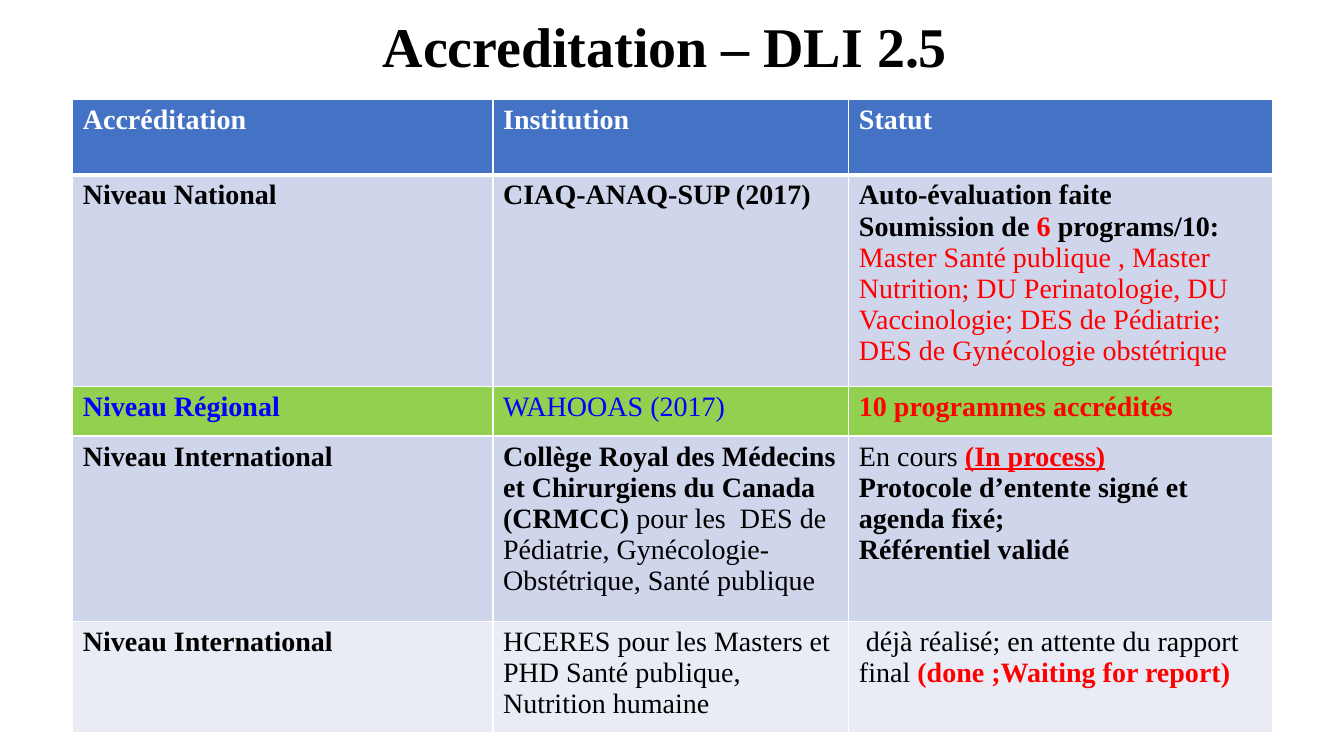
import dataclasses

import pptx
import pptx.dml.color
import pptx.enum.text
import pptx.oxml.ns
import pptx.util
from lxml import etree

FONT = "Times New Roman"
WHITE, BLACK, RED, BLUE = "FFFFFF", "000000", "FF0000", "0000FF"
HEADER_FILL, BAND_FILL, PLAIN_FILL, GREEN_FILL = "4472C4", "CFD5EA", "E9EBF5", "92D050"
COLUMN_WIDTHS = [300.2, 254.2, 302.4]


@dataclasses.dataclass(frozen=True)
class Span:
    text: str
    color: str = BLACK
    bold: bool = True
    underline: bool = False


Paragraphs = list[list[Span]]


@dataclasses.dataclass(frozen=True)
class Level:
    height: float
    fill: str
    cells: list[Paragraphs]
    bottom_border: float = 1


LEVELS = [
    Level(54, HEADER_FILL, [
        [[Span(heading, WHITE)]] for heading in ("Accréditation", "Institution", "Statut")
    ], bottom_border=3),
    Level(140.4, BAND_FILL, [
        [[Span("Niveau National")]],
        [[Span("CIAQ-ANAQ-SUP (2017)")]],
        [
            [Span("Auto-évaluation faite")],
            [
                Span("Soumission de "),
                Span("6 ", RED),
                Span("programs/10: "),
                Span("Master Santé publique , Master Nutrition; DU Perinatologie, "
                     "DU Vaccinologie; DES de Pédiatrie; DES de Gynécologie obstétrique",
                     RED, bold=False),
            ],
        ],
    ]),
    Level(35.3, GREEN_FILL, [
        [[Span("Niveau Régional", BLUE)]],
        [[Span("WAHOOAS (2017)", BLUE, bold=False)]],
        [[Span("10 programmes accrédités", RED)]],
    ]),
    Level(132.5, BAND_FILL, [
        [[Span("Niveau International")]],
        [[
            Span("Collège Royal des Médecins et Chirurgiens du Canada (CRMCC) "),
            Span("pour les  DES de Pédiatrie, Gynécologie-Obstétrique, Santé publique", bold=False),
        ]],
        [
            [Span("En cours ", bold=False), Span("(In process)", RED, underline=True)],
            [Span("Protocole d’entente signé et agenda fixé;")],
            [Span("Référentiel validé")],
        ],
    ]),
    Level(77.8, PLAIN_FILL, [
        [[Span("Niveau International")]],
        [[Span("HCERES pour les Masters et PHD Santé publique, Nutrition humaine", bold=False)]],
        [[
            Span(" déjà réalisé; en attente du rapport final ", bold=False),
            Span("(done ;Waiting for report)", RED),
        ]],
    ]),
]


def rgb(value: str) -> pptx.dml.color.RGBColor:
    return pptx.dml.color.RGBColor.from_string(value)


def write_paragraphs(frame, paragraphs: Paragraphs, size: float) -> None:
    frame.text = "\n".join("" for _ in paragraphs)
    for paragraph, spans in zip(frame.paragraphs, paragraphs):
        for span in spans:
            run = paragraph.add_run()
            run.text = span.text
            run.font.name = FONT
            run.font.size = pptx.util.Pt(size)
            run.font.bold = span.bold
            run.font.underline = span.underline
            run.font.color.rgb = rgb(span.color)


def add_borders(cell, top: float, bottom: float) -> None:
    properties = cell._tc.get_or_add_tcPr()
    qn = pptx.oxml.ns.qn
    for side, width in (("L", 1), ("R", 1), ("T", top), ("B", bottom)):
        line = etree.SubElement(properties, qn(f"a:ln{side}"), w=str(pptx.util.Pt(width)))
        solid = etree.SubElement(line, qn("a:solidFill"))
        etree.SubElement(solid, qn("a:srgbClr"), val=WHITE)


def add_title(slide) -> None:
    title = slide.shapes.add_textbox(
        pptx.util.Pt(156), pptx.util.Pt(0), pptx.util.Pt(648), pptx.util.Pt(70.5))
    frame = title.text_frame
    frame.word_wrap = True
    frame.vertical_anchor = pptx.enum.text.MSO_ANCHOR.MIDDLE
    write_paragraphs(frame, [[Span("Accreditation – DLI 2.5 ")]], 40)
    frame.paragraphs[0].alignment = pptx.enum.text.PP_ALIGN.CENTER
    frame.paragraphs[0].line_spacing = 0.9


def add_accreditation_table(slide) -> None:
    table = slide.shapes.add_table(
        len(LEVELS), len(COLUMN_WIDTHS), pptx.util.Pt(52), pptx.util.Pt(70.9),
        pptx.util.Pt(sum(COLUMN_WIDTHS)),
        pptx.util.Pt(sum(level.height for level in LEVELS))).table
    for column, width in zip(table.columns, COLUMN_WIDTHS):
        column.width = pptx.util.Pt(width)
    top_border = 1
    for row, level in zip(table.rows, LEVELS):
        row.height = pptx.util.Pt(level.height)
        for cell, paragraphs in zip(row.cells, level.cells):
            add_borders(cell, top_border, level.bottom_border)
            cell.fill.solid()
            cell.fill.fore_color.rgb = rgb(level.fill)
            write_paragraphs(cell.text_frame, paragraphs, 20)
        top_border = level.bottom_border


def main() -> None:
    presentation = pptx.Presentation()
    presentation.slide_width = pptx.util.Pt(960)
    presentation.slide_height = pptx.util.Pt(540)
    slide = presentation.slides.add_slide(presentation.slide_layouts[6])
    add_title(slide)
    add_accreditation_table(slide)
    presentation.save("out.pptx")


if __name__ == "__main__":
    main()
